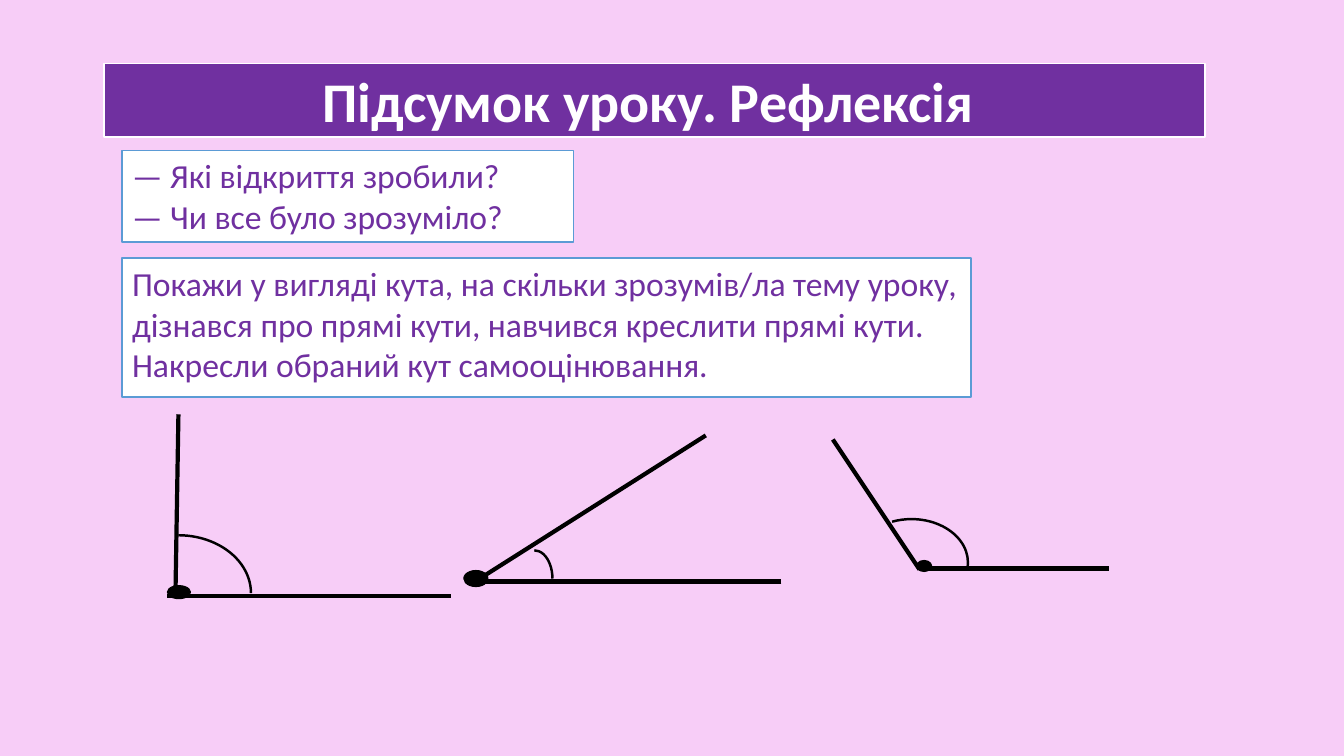
from dataclasses import dataclass

from lxml import etree
from pptx import Presentation
from pptx.dml.color import RGBColor
from pptx.enum.shapes import MSO_CONNECTOR, MSO_SHAPE
from pptx.enum.text import MSO_ANCHOR, MSO_AUTO_SIZE, PP_ALIGN
from pptx.oxml.ns import qn
from pptx.util import Emu, Pt

PX = 9144  # EMU per px, 100 px to the inch
FONT = "Calibri"
PINK = RGBColor(0xF7, 0xCD, 0xF7)
PURPLE = RGBColor(0x70, 0x30, 0xA0)
BLUE = RGBColor(0x5B, 0x9B, 0xD5)
WHITE = RGBColor(0xFF, 0xFF, 0xFF)
BLACK = RGBColor(0x00, 0x00, 0x00)
ARC, OVAL, STRAIGHT = MSO_SHAPE.ARC, MSO_SHAPE.OVAL, MSO_CONNECTOR.STRAIGHT
LEFT, CENTER = PP_ALIGN.LEFT, PP_ALIGN.CENTER
TOP, MIDDLE = MSO_ANCHOR.TOP, MSO_ANCHOR.MIDDLE
NO_FIT = MSO_AUTO_SIZE.NONE

Box = tuple[int, int, int, int]  # left, top, width, height


@dataclass
class Angle:
    rays: tuple[Box, Box]  # x1, y1, x2, y2
    arc: Box  # full ellipse that the arc is part of
    vertex: Box
    start: float = 270  # degrees, clockwise from the right
    end: float = 0


ANGLES = [
    Angle(((174, 592, 177, 411), (447, 591, 166, 591)),
          (105, 531, 144, 115), (166, 581, 23, 13)),
    Angle(((775, 577, 476, 577), (468, 579, 700, 432)),
          (512, 546, 36, 56), (460, 566, 24, 16)),
    Angle(((912, 565, 826, 436), (912, 564, 1100, 564)),
          (848, 515, 112, 86), (909, 556, 15, 11), 244.6, 4),
]


def emu(box: Box) -> list[Emu]:
    return [Emu(n * PX) for n in box]


def set_line(sp, color: RGBColor, width: float) -> None:
    sp.line.color.rgb = color
    sp.line.width = Pt(width)


def set_text(sp, paragraphs: list[str], *, size: int, color: RGBColor,
             bold: bool = False, align=LEFT, anchor=TOP) -> None:
    tf = sp.text_frame
    tf.word_wrap = True
    tf.auto_size = NO_FIT
    tf.vertical_anchor = anchor
    for i, text in enumerate(paragraphs):
        p = tf.paragraphs[0] if i == 0 else tf.add_paragraph()
        p.alignment = align
        p.line_spacing = 1.0
        p.space_before = p.space_after = Pt(0)
        pPr = p._p.get_or_add_pPr()
        pPr.set("marL", "0")
        pPr.set("indent", "0")
        etree.SubElement(pPr, qn("a:buNone"))
        r = p.add_run()
        r.text = text
        r.font.name = FONT
        r.font.size = Pt(size)
        r.font.bold = bold
        r.font.color.rgb = color


def place_panel(sp, box: Box, fill: RGBColor, line: RGBColor) -> None:
    sp.left, sp.top, sp.width, sp.height = emu(box)
    sp.fill.solid()
    sp.fill.fore_color.rgb = fill
    set_line(sp, line, 1)


def draw_angle(slide, angle: Angle) -> None:
    shapes = slide.shapes.add_group_shape().shapes

    arc = shapes.add_shape(ARC, *emu(angle.arc))
    arc.shadow.inherit = False
    arc.fill.background()
    set_line(arc, BLACK, 1.75)
    # Adjustments are in units of 100000, angles in 60000ths of a degree
    arc.adjustments[0] = angle.start * 0.6
    arc.adjustments[1] = angle.end * 0.6

    for ray in angle.rays:
        line = shapes.add_connector(STRAIGHT, *emu(ray))
        set_line(line, BLACK, 3)
        etree.SubElement(line._element.spPr, qn("a:effectLst"))

    dot = shapes.add_shape(OVAL, *emu(angle.vertex))
    dot.shadow.inherit = False
    dot.fill.solid()
    dot.fill.fore_color.rgb = BLACK
    set_line(dot, BLACK, 0.75)


def main() -> None:
    prs = Presentation()
    prs.slide_width, prs.slide_height = Emu(1333 * PX), Emu(750 * PX)
    slide = prs.slides.add_slide(prs.slide_layouts[3])
    slide.background.fill.solid()
    slide.background.fill.fore_color.rgb = PINK
    title, questions, task = slide.placeholders

    # Title bar
    place_panel(title, (103, 63, 1092, 73), PURPLE, WHITE)
    set_text(title, ["Підсумок уроку. Рефлексія "], size=40, color=WHITE,
             bold=True, align=CENTER, anchor=MIDDLE)

    # Questions and task
    place_panel(questions, (121, 149, 448, 91), WHITE, BLUE)
    set_text(questions, ["— Які відкриття зробили?", "— Чи все було зрозуміло?"],
             size=24, color=PURPLE)
    place_panel(task, (121, 256, 842, 138), WHITE, BLUE)
    set_text(task, ["Покажи у вигляді кута, на скільки зрозумів/ла тему уроку, "
                    "дізнався про прямі кути, навчився креслити прямі кути.",
                    "Накресли обраний кут самооцінювання."],
             size=24, color=PURPLE)

    # Right, acute and obtuse angles
    for angle in ANGLES:
        draw_angle(slide, angle)

    prs.save("out.pptx")


if __name__ == "__main__":
    main()
